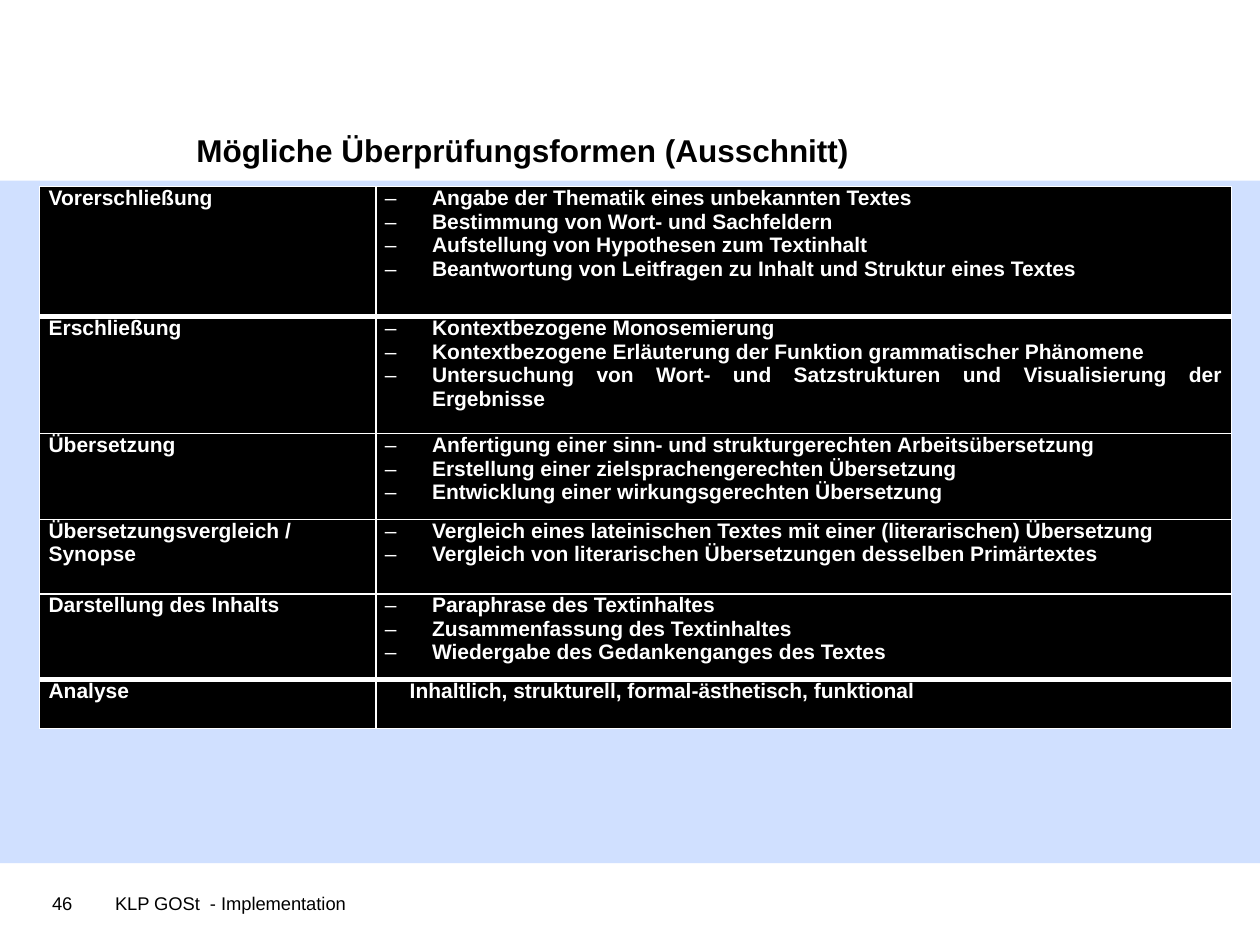
from lxml.etree import SubElement
from pptx import Presentation
from pptx.dml.color import RGBColor
from pptx.enum.shapes import MSO_SHAPE
from pptx.enum.text import PP_ALIGN
from pptx.oxml import parse_xml
from pptx.oxml.ns import nsdecls, qn
from pptx.util import Cm, Pt

BLACK = RGBColor(0, 0, 0)
WHITE = RGBColor(255, 255, 255)
BLUE = RGBColor(0x66, 0x99, 0xFF)

ROWS = [
    (2.62, ["Vorerschließung"],
     ["Angabe der Thematik eines unbekannten Textes",
      "Bestimmung von Wort- und Sachfeldern",
      "Aufstellung von Hypothesen zum Textinhalt",
      "Beantwortung von Leitfragen zu Inhalt und Struktur eines Textes"]),
    (2.36, ["Erschließung"],
     ["Kontextbezogene Monosemierung",
      "Kontextbezogene Erläuterung der Funktion grammatischer Phänomene",
      "Untersuchung von Wort- und Satzstrukturen und Visualisierung der Ergebnisse"]),
    (1.73, ["Übersetzung"],
     ["Anfertigung einer sinn- und strukturgerechten Arbeitsübersetzung",
      "Erstellung einer zielsprachengerechten Übersetzung",
      "Entwicklung einer wirkungsgerechten Übersetzung"]),
    (1.5, ["Übersetzungsvergleich /", "Synopse"],
     ["Vergleich eines lateinischen Textes mit einer (literarischen) Übersetzung",
      "Vergleich von literarischen Übersetzungen desselben Primärtextes"]),
    (1.73, ["Darstellung des Inhalts"],
     ["Paraphrase des Textinhaltes",
      "Zusammenfassung des Textinhaltes",
      "Wiedergabe des Gedankenganges des Textes"]),
    (0.99, ["Analyse"],
     ["Inhaltlich, strukturell, formal-ästhetisch, funktional"]),
]
THICK = {1, 5}  # rows with a heavy line above


def write(frame, lines, size=12, color=BLACK, bold=False, align=PP_ALIGN.LEFT,
          left=0, hang=0, mark=None):
    for i, line in enumerate(lines):
        par = frame.paragraphs[0] if i == 0 else frame.add_paragraph()
        par.alignment = align
        props = par._p.get_or_add_pPr()
        props.set("marL", str(Cm(left)))
        props.set("indent", str(-Cm(hang)))
        if mark:
            SubElement(props, qn("a:buFont")).set("typeface", "Arial")
            SubElement(props, qn("a:buChar")).set("char", mark)
        run = par.add_run()
        run.text = line
        font = run.font
        font.name, font.size, font.bold = "Arial", Pt(size), bold
        font.color.rgb = color


def edge(cell, **widths):
    props = cell._tc.get_or_add_tcPr()
    for i, (side, width) in enumerate(widths.items()):
        props.insert(i, parse_xml(
            f'<a:ln{side} {nsdecls("a")} w="{Pt(width)}"><a:solidFill>'
            f'<a:srgbClr val="{WHITE}"/></a:solidFill></a:ln{side}>'))


deck = Presentation()
deck.slide_width, deck.slide_height = Cm(25.4), Cm(19.05)
slide = deck.slides.add_slide(deck.slide_layouts[6])
shapes = slide.shapes

# Pale blue band
band = shapes.add_shape(MSO_SHAPE.RECTANGLE, 0, Cm(3.64), Cm(25.4), Cm(13.76))
band.shadow.inherit = False
band.line.fill.background()
band.fill.solid()
band.fill.fore_color.rgb = BLUE
tint = band._element.spPr.find(".//" + qn("a:srgbClr"))
SubElement(tint, qn("a:alpha")).set("val", "30000")

# Title
title = shapes.add_textbox(Cm(1.42), Cm(2.24), Cm(22.4), Cm(14)).text_frame
title.word_wrap = True
title.margin_left = title.margin_right = title.margin_bottom = 0
title.margin_top = Cm(0.41)
write(title, ["Mögliche Überprüfungsformen (Ausschnitt)"], size=18, bold=True,
      left=2.54)

# Table
high = sum(row[0] for row in ROWS)
table = shapes.add_table(len(ROWS), 2, Cm(0.8), Cm(3.76), Cm(24.03),
                         Cm(high)).table
table.first_row = table.horz_banding = False
table.columns[0].width, table.columns[1].width = Cm(6.78), Cm(17.25)
for r, (tall, head, items) in enumerate(ROWS):
    table.rows[r].height = Cm(tall)
    if len(items) > 1:
        style = dict(left=0.95, hang=0.95, mark="–")
    else:
        style = dict(left=0.5)
    for c, (lines, form) in enumerate([(head, {}), (items, style)]):
        cell = table.cell(r, c)
        cell.margin_left = cell.margin_right = Cm(0.18)
        cell.margin_top = cell.margin_bottom = 0
        cell.fill.solid()
        cell.fill.fore_color.rgb = BLACK
        edge(cell, L=1, R=1, T=3 if r in THICK else 1,
             B=3 if r + 1 in THICK else 1)
        write(cell.text_frame, lines, color=WHITE, bold=True,
              align=PP_ALIGN.JUSTIFY, **form)

# Footer
foot = shapes.add_textbox(Cm(0.8), Cm(17.86), Cm(24.38), Cm(0.71)).text_frame
foot.word_wrap = True
write(foot, ["46\tKLP GOSt  - Implementation"], size=10.5)

deck.save("out.pptx")
